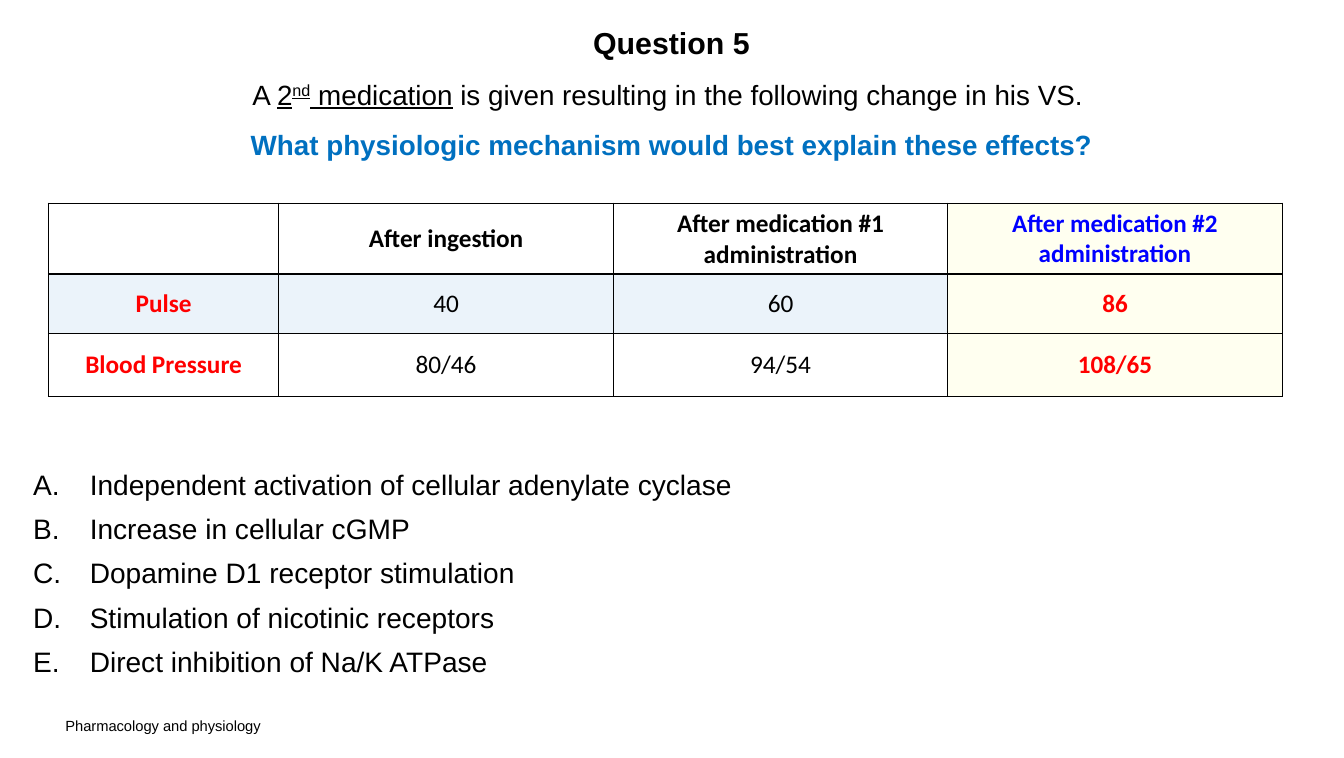
from dataclasses import dataclass

import pptx
import pptx.dml.color
import pptx.enum.text
import pptx.util
from lxml import etree
from pptx.oxml.ns import qn

Inches = pptx.util.Inches
ANCHOR = pptx.enum.text.MSO_ANCHOR
ALIGN = pptx.enum.text.PP_ALIGN


@dataclass
class Theme:
    black: str = "000000"
    red: str = "FF0000"
    blue: str = "0000FF"
    question: str = "0070C0"
    band: str = "EBF3FA"
    highlight: str = "FFFFF0"
    text_font: str = "Arial"
    table_font: str = "Calibri"
    title_size: float = 21.6
    question_size: float = 19.8
    answer_size: float = 20
    table_size: float = 18
    highlight_size: float = 17.9
    footer_size: float = 10.5


theme = Theme()


def style(r, size, color=theme.black, bold=False, font=theme.text_font):
    r.font.name = font
    r.font.size = pptx.util.Pt(size)
    r.font.bold = bold
    r.font.color.rgb = pptx.dml.color.RGBColor.from_string(color)


def add_text(s, left, top, width, height, wrap=True):
    sp = s.shapes.add_textbox(Inches(left), Inches(top), Inches(width), Inches(height))
    sp.text_frame.word_wrap = wrap
    return sp.text_frame


prs = pptx.Presentation()
prs.slide_width, prs.slide_height = Inches(13.3), Inches(7.5)
s = prs.slides.add_slide(prs.slide_layouts[6])

# Question
tf = add_text(s, 0.23, 0.08, 12.83, 1.49)
tf.vertical_anchor = ANCHOR.MIDDLE
p = tf.paragraphs[0]
p.alignment = ALIGN.CENTER
p.line_spacing = 1.5
r = p.add_run()
r.text = "Question 5"
style(r, theme.title_size, bold=True)
p.add_line_break()
for text, underline, baseline in [
    ("A ", False, 0),
    ("2", True, 0),
    ("nd", True, 30000),
    (" medication", True, 0),
    (" is given resulting in the following change in his VS. ", False, 0),
]:
    r = p.add_run()
    r.text = text
    style(r, theme.question_size)
    r.font.underline = underline
    if baseline:
        r.font._element.set("baseline", str(baseline))
p.add_line_break()
r = p.add_run()
r.text = "What physiologic mechanism would best explain these effects?"
style(r, theme.question_size, theme.question, bold=True)

# Vital signs table
rows = [
    ["", "After ingestion", "After medication #1 administration", "After medication #2 administration"],
    ["Pulse", "40", "60", "86"],
    ["Blood Pressure", "80/46", "94/54", "108/65"],
]
table = s.shapes.add_table(3, 4, Inches(0.48), Inches(2.01), Inches(12.21), Inches(1.91)).table
table.first_row = table.horz_banding = False
for column, width in zip(table.columns, [2.28, 3.31, 3.31, 3.31]):
    column.width = Inches(width)
for row, height in zip(table.rows, [0.7, 0.59, 0.62]):
    row.height = Inches(height)

for i, row in enumerate(rows):
    for j, text in enumerate(row):
        cell = table.cell(i, j)
        cell.vertical_anchor = ANCHOR.MIDDLE
        last = j == len(row) - 1

        # Borders come before the fill in the cell properties
        tcPr = cell._tc.get_or_add_tcPr()
        for side in ("a:lnL", "a:lnR", "a:lnT", "a:lnB"):
            ln = etree.SubElement(tcPr, qn(side), w=str(pptx.util.Pt(1)))
            fill = etree.SubElement(ln, qn("a:solidFill"))
            etree.SubElement(fill, qn("a:srgbClr"), val=theme.black)

        if last or i == 1:
            cell.fill.solid()
            shade = theme.highlight if last else theme.band
            cell.fill.fore_color.rgb = pptx.dml.color.RGBColor.from_string(shade)
        else:
            cell.fill.background()

        if text:
            p = cell.text_frame.paragraphs[0]
            p.text = text
            p.alignment = ALIGN.CENTER
            if i == 0:
                color = theme.blue if last else theme.black
            else:
                color = theme.red if last or j == 0 else theme.black
            size = theme.highlight_size if last else theme.table_size
            style(p.runs[0], size, color, i == 0 or j == 0 or last, theme.table_font)

# Lettered answers
answers = [
    "Independent activation of cellular adenylate cyclase",
    "Increase in cellular cGMP",
    "Dopamine D1 receptor stimulation",
    "Stimulation of nicotinic receptors",
    "Direct inhibition of Na/K ATPase",
]
tf = add_text(s, 0.23, 4.61, 8.75, 2.25)
for i, answer in enumerate(answers):
    p = tf.paragraphs[0] if i == 0 else tf.add_paragraph()
    p.text = answer
    p.line_spacing = 0.9
    p.space_before = pptx.util.Pt(10)
    style(p.runs[0], theme.answer_size)
    pPr = p._p.get_or_add_pPr()
    pPr.set("marL", str(Inches(0.56)))
    pPr.set("indent", str(-Inches(0.56)))
    etree.SubElement(pPr, qn("a:buFont"), typeface=theme.text_font)
    etree.SubElement(pPr, qn("a:buAutoNum"), type="alphaUcPeriod")

# Footer
tf = add_text(s, 0.55, 7.04, 2.17, 0.28, wrap=False)
tf.text = "Pharmacology and physiology"
style(tf.paragraphs[0].runs[0], theme.footer_size)

prs.save("out.pptx")
